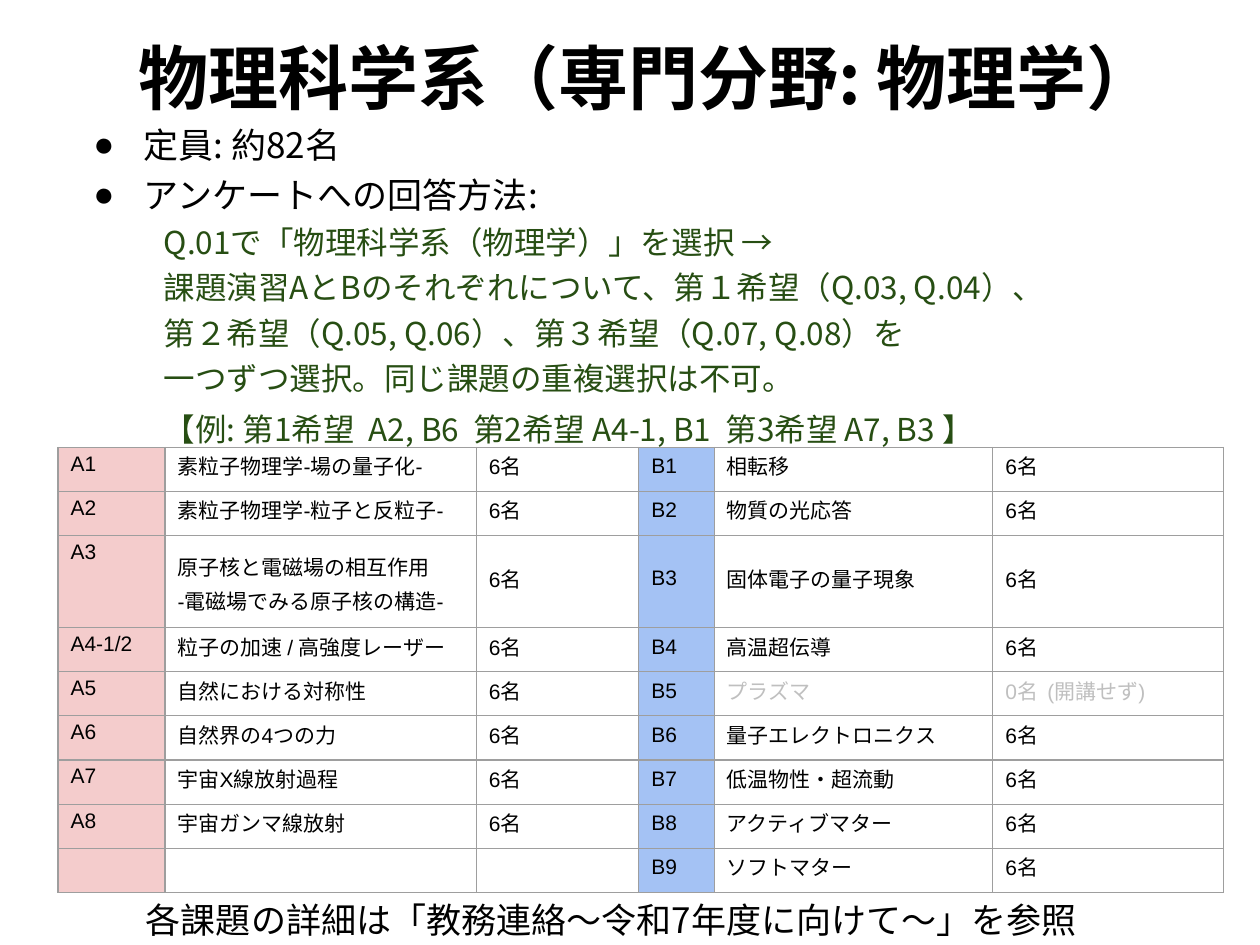
from lxml import etree
from pptx import Presentation
from pptx.dml.color import RGBColor
from pptx.enum.text import MSO_ANCHOR, MSO_AUTO_SIZE, PP_ALIGN
from pptx.oxml.ns import qn
from pptx.util import Inches, Pt

TOP, MIDDLE = MSO_ANCHOR.TOP, MSO_ANCHOR.MIDDLE
LEFT, CENTER = PP_ALIGN.LEFT, PP_ALIGN.CENTER
NO_FIT = MSO_AUTO_SIZE.NONE
CJK, LATIN = "Noto Sans CJK JP", "Arial"
BLACK, GREEN, GREY, BORDER = "000000", "274E13", "BFBFBF", "9E9E9E"
COLUMN_FILLS = {0: "F4CCCC", 3: "A4C2F4"}

TITLE = "物理科学系（専門分野: 物理学）"
BULLETS = ["定員: 約82名", "アンケートへの回答方法:"]
ANSWER_STEPS = [
    "Q.01で「物理科学系（物理学）」を選択 →",
    "課題演習AとBのそれぞれについて、第１希望（Q.03, Q.04）、",
    "第２希望（Q.05, Q.06）、第３希望（Q.07, Q.08）を",
    "一つずつ選択。同じ課題の重複選択は不可。",
]
EXAMPLE = "【例: 第1希望  A2, B6  第2希望 A4-1, B1  第3希望 A7, B3 】"
FOOTNOTE = "各課題の詳細は「教務連絡～令和7年度に向けて～」を参照"

SEATS, CLOSED = "6名", "0名  (開講せず)"
COURSES = [
    ("A1", "素粒子物理学-場の量子化-", SEATS, "B1", "相転移", SEATS),
    ("A2", "素粒子物理学-粒子と反粒子-", SEATS, "B2", "物質の光応答", SEATS),
    ("A3", "原子核と電磁場の相互作用\n-電磁場でみる原子核の構造-", SEATS,
     "B3", "固体電子の量子現象", SEATS),
    ("A4-1/2", "粒子の加速 / 高強度レーザー", SEATS, "B4", "高温超伝導", SEATS),
    ("A5", "自然における対称性", SEATS, "B5", "プラズマ", CLOSED),
    ("A6", "自然界の4つの力", SEATS, "B6", "量子エレクトロニクス", SEATS),
    ("A7", "宇宙X線放射過程", SEATS, "B7", "低温物性・超流動", SEATS),
    ("A8", "宇宙ガンマ線放射", SEATS, "B8", "アクティブマター", SEATS),
    ("", "", "", "B9", "ソフトマター", SEATS),
]
COL_WIDTHS = [0.85, 2.47, 1.29, 0.6, 2.21, 1.83]
ROW_HEIGHT, TALL_ROW_HEIGHT = 0.35, 0.54


def rgb(value):
    """Return the colour for a hex string."""
    return RGBColor.from_string(value)


def add_text(tf, text, size=20, color=BLACK, font=CJK, bold=False, align=LEFT,
             spacing=1.2, before=0, indent=None, bullet=None):
    """Add one formatted paragraph, filling the first one if it is unused."""
    p = tf.paragraphs[0] if not tf.paragraphs[0].runs else tf.add_paragraph()
    p.alignment, p.line_spacing, p.space_before = align, spacing, Pt(before)
    r = p.add_run()
    r.text = text
    r.font.size, r.font.name, r.font.bold = Pt(size), font, bold
    r.font.color.rgb = rgb(color)
    etree.SubElement(r.font._element, qn("a:ea"), typeface=CJK)
    if indent:
        pPr = p._p.get_or_add_pPr()
        pPr.set("marL", str(Inches(indent)))
        pPr.set("indent", str(Inches(-0.4 if bullet else 0)))
        if bullet:
            etree.SubElement(pPr, qn("a:buChar"), char=bullet)
        else:
            etree.SubElement(pPr, qn("a:buNone"))


def place(shape, left, top, width, height, anchor=TOP):
    """Position a text shape and return its text frame."""
    shape.left, shape.top = Inches(left), Inches(top)
    shape.width, shape.height = Inches(width), Inches(height)
    tf = shape.text_frame
    tf.word_wrap, tf.auto_size, tf.vertical_anchor = True, NO_FIT, anchor
    return tf


def add_borders(cell):
    """Draw a thin line on all four sides of a cell."""
    tcPr = cell._tc.get_or_add_tcPr()
    for i, side in enumerate(("lnL", "lnR", "lnT", "lnB")):
        ln = etree.Element(qn(f"a:{side}"), w=str(Pt(0.75)))
        fill = etree.SubElement(ln, qn("a:solidFill"))
        etree.SubElement(fill, qn("a:srgbClr"), val=BORDER)
        tcPr.insert(i, ln)


def fill_cell(cell, text, col, color):
    """Write and format one course cell."""
    cell.margin_left = cell.margin_right = Inches(0.1)
    cell.margin_top = cell.margin_bottom = Inches(0.1 if text else 0)
    cell.vertical_anchor = MIDDLE if col else TOP
    if col in COLUMN_FILLS:
        cell.fill.solid()
        cell.fill.fore_color.rgb = rgb(COLUMN_FILLS[col])
    else:
        cell.fill.background()
    lines = text.split("\n")
    for line in lines:
        add_text(cell.text_frame, line, size=12, color=color, font=LATIN,
                 spacing=1.1 if len(lines) > 1 else 0.6)
    add_borders(cell)


def add_courses(s):
    """Add the table of courses."""
    table = s.shapes.add_table(
        len(COURSES), len(COL_WIDTHS), Inches(0.46), Inches(3.55),
        Inches(sum(COL_WIDTHS)), Inches(ROW_HEIGHT * len(COURSES))).table
    table.first_row = table.horz_banding = False
    for column, width in zip(table.columns, COL_WIDTHS):
        column.width = Inches(width)
    for i, course in enumerate(COURSES):
        tall = any("\n" in text for text in course)
        table.rows[i].height = Inches(TALL_ROW_HEIGHT if tall else ROW_HEIGHT)
        for j, text in enumerate(course):
            closed = CLOSED in course and j > 3
            fill_cell(table.cell(i, j), text, j, GREY if closed else BLACK)


def main():
    """Build the slide and save it."""
    prs = Presentation()
    prs.slide_width, prs.slide_height = Inches(10), Inches(7.5)
    s = prs.slides.add_slide(prs.slide_layouts[1])

    tf = place(s.shapes.title, 0.46, 0.22, 9.36, 0.64, MIDDLE)
    add_text(tf, TITLE, size=40, bold=True, align=CENTER)

    tf = place(s.placeholders[1], 0.54, 0.86, 9.2, 2.54)
    for text in BULLETS:
        add_text(tf, text, indent=0.5, bullet="●")
    for text in ANSWER_STEPS:
        add_text(tf, text, size=18, color=GREEN, indent=0.66)
    add_text(tf, EXAMPLE, size=18, color=GREEN, indent=0.66, before=3)

    add_courses(s)

    box = s.shapes.add_textbox(0, 0, 0, 0)
    add_text(place(box, 1.06, 7.08, 8.16, 0.4), FOOTNOTE, spacing=1.0)
    prs.save("out.pptx")


if __name__ == "__main__":
    main()
